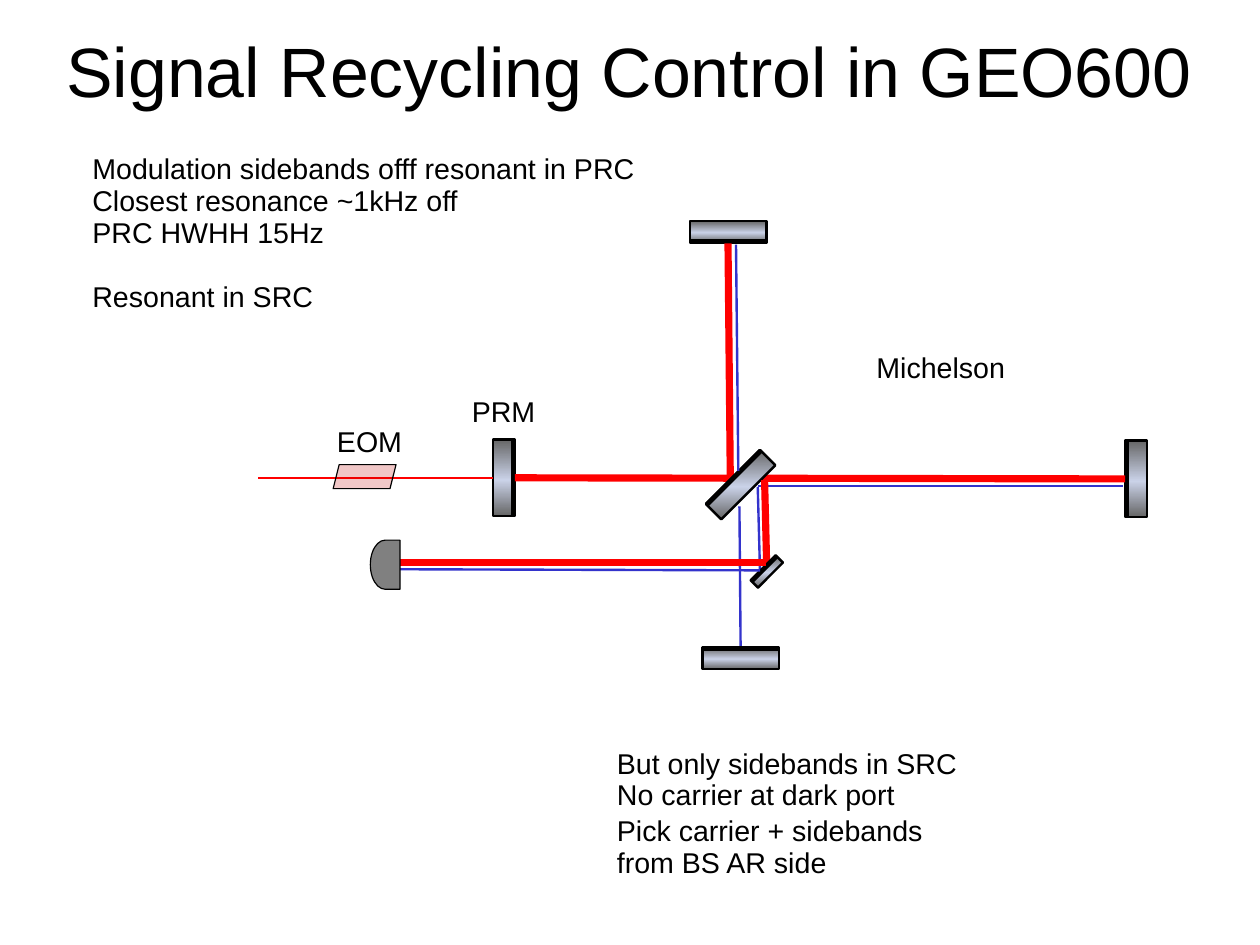
from copy import deepcopy
from math import cos, radians, sin

from lxml import etree
from pptx import Presentation
from pptx.dml.color import RGBColor
from pptx.enum.shapes import MSO_CONNECTOR, MSO_SHAPE
from pptx.enum.text import MSO_ANCHOR, MSO_AUTO_SIZE, PP_ALIGN
from pptx.oxml.ns import qn
from pptx.util import Inches, Pt

STRAIGHT = MSO_CONNECTOR.STRAIGHT
RECTANGLE = MSO_SHAPE.RECTANGLE
PARALLELOGRAM = MSO_SHAPE.PARALLELOGRAM
DELAY = MSO_SHAPE.FLOWCHART_DELAY
MIDDLE = MSO_ANCHOR.MIDDLE
NO_AUTOFIT = MSO_AUTO_SIZE.NONE
GROW = MSO_AUTO_SIZE.SHAPE_TO_FIT_TEXT
CENTER, LEFT = PP_ALIGN.CENTER, PP_ALIGN.LEFT

BLACK = RGBColor(0x00, 0x00, 0x00)
CARRIER_RED = RGBColor(0xFF, 0x00, 0x00)
SIDEBAND_BLUE = RGBColor(0x33, 0x33, 0xCC)
MIRROR_DARK = RGBColor(0x66, 0x66, 0x66)
MIRROR_LIGHT = RGBColor(0xCA, 0xD2, 0xE8)
EOM_RED = RGBColor(0xC0, 0x00, 0x00)
DETECTOR_GRAY = RGBColor(0x80, 0x80, 0x80)

CARRIER = (CARRIER_RED, 4.5)
SIDEBAND = (SIDEBAND_BLUE, 1.5)
INPUT = (CARRIER_RED, 1)
COATING = (BLACK, 3)
LEFT_SIDE, RIGHT_SIDE = 1, 3


def format_paragraph(paragraph, size, align):
    paragraph.alignment = align
    paragraph.line_spacing = 0.93
    font_format = {"size": Pt(size), "name": "Arial", "bold": False}
    for key, value in font_format.items():
        setattr(paragraph.font, key, value)
    paragraph.font.color.rgb = BLACK


def fill_title(title, left, top, width, height):
    title.left, title.top = Inches(left), Inches(top)
    title.width, title.height = Inches(width), Inches(height)
    frame = title.text_frame
    frame.text = "Signal Recycling Control in GEO600"
    frame_format = {"margin_left": 0, "margin_right": 0, "margin_top": 0,
                    "margin_bottom": 0, "vertical_anchor": MIDDLE,
                    "auto_size": NO_AUTOFIT, "word_wrap": True}
    for key, value in frame_format.items():
        setattr(frame, key, value)
    format_paragraph(frame.paragraphs[0], 44, CENTER)


def add_caption(shapes, text, left, top, width, height):
    caption = shapes.add_textbox(Inches(left), Inches(top), Inches(width), Inches(height))
    frame = caption.text_frame
    frame.text = text
    frame.word_wrap = False
    frame.auto_size = GROW
    for paragraph in frame.paragraphs:
        format_paragraph(paragraph, 18, LEFT)
    return caption


def add_modulation_notes(shapes, left, top, width, height):
    notes = add_caption(shapes,
                        "Modulation sidebands offf resonant in PRC\n"
                        "Closest resonance ~1kHz off\n"
                        "PRC HWHH 15Hz\n"
                        "Resonant in SRC", left, top, width, height)
    notes.text_frame.paragraphs[-1].space_before = Pt(20)


def add_dark_port_notes(shapes, left, top):
    add_caption(shapes, "But only sidebands in SRC\nNo carrier at dark port",
                left, top, 3.2, 0.66)
    add_caption(shapes, "Pick carrier + sidebands\vfrom BS AR side",
                left, top + 0.59, 2.97, 0.66)


def add_line(shapes, start, end, style):
    color, width = style
    line = shapes.add_connector(STRAIGHT, *(Inches(value) for value in (*start, *end)))
    line.line.color.rgb = color
    line.line.width = Pt(width)
    etree.SubElement(line._element.spPr, qn("a:effectLst"))
    return line


def add_optic(shapes, preset, center, width, height, line_width):
    x, y = center
    optic = shapes.add_shape(preset, Inches(x - width / 2), Inches(y - height / 2),
                             Inches(width), Inches(height))
    optic.shadow.inherit = False
    optic.line.color.rgb = BLACK
    optic.line.width = Pt(line_width)
    return optic


def shade_glass(glass):
    """Dark-light-dark gradient from top to bottom, whatever the rotation."""
    glass.fill.gradient()
    glass.fill.gradient_angle = 270
    gradient = glass._element.spPr.find(qn("a:gradFill"))
    gradient.set("rotWithShape", "0")
    stop_list = gradient.find(qn("a:gsLst"))
    stop_list.insert(1, deepcopy(stop_list[0]))
    shades = ((0, MIRROR_DARK), (0.53, MIRROR_LIGHT), (1, MIRROR_DARK))
    for stop, (position, color) in zip(glass.fill.gradient_stops, shades):
        stop.position = position
        stop.color.rgb = color


def add_mirror(shapes, center, angle, thickness=0.19, length=0.67):
    """Mirror whose coated face looks left at angle 0 and turns clockwise."""
    glass = add_optic(shapes, RECTANGLE, center, thickness, length, 1.5)
    glass.rotation = angle % 180
    shade_glass(glass)
    x, y = center
    across, along = cos(radians(angle)), sin(radians(angle))
    depth = thickness / 2 - 0.01
    face_x, face_y = x - depth * across, y - depth * along
    half_x, half_y = along * length / 2, across * length / 2
    add_line(shapes, (face_x + half_x, face_y - half_y),
             (face_x - half_x, face_y + half_y), COATING)
    return glass


def add_eom(shapes, center):
    eom = add_optic(shapes, PARALLELOGRAM, center, 0.55, 0.21, 0.75)
    eom.fill.solid()
    eom.fill.fore_color.rgb = EOM_RED
    color = eom._element.spPr.find(qn("a:solidFill")).find(qn("a:srgbClr"))
    etree.SubElement(color, qn("a:alpha")).set("val", "22000")


def add_detector(shapes, center):
    detector = add_optic(shapes, DELAY, center, 0.26, 0.43, 0.75)
    detector.rotation = 180
    detector.fill.solid()
    detector.fill.fore_color.rgb = DETECTOR_GRAY


def draw_interferometer(shapes, left, top):
    def at(x, y):
        return left + x, top + y

    def beam(start, end, style):
        return add_line(shapes, at(*start), at(*end), style)

    east_mirror = add_mirror(shapes, at(7.94, 2.69), 0)
    recycling_mirror = add_mirror(shapes, at(2.41, 2.68), 180)
    east_arm = beam((2.51, 2.68), (7.84, 2.69), CARRIER)
    east_arm.begin_connect(recycling_mirror, RIGHT_SIDE)
    east_arm.end_connect(east_mirror, LEFT_SIDE)

    add_mirror(shapes, at(4.37, 0.53), 270)
    beam((4.39, 2.69), (4.37, 0.63), CARRIER)
    add_mirror(shapes, at(4.48, 2.74), 45)

    input_beam = beam((0.26, 2.68), (2.31, 2.68), INPUT)
    input_beam.end_connect(recycling_mirror, LEFT_SIDE)
    add_eom(shapes, at(1.19, 2.67))
    add_mirror(shapes, at(4.48, 4.26), 90)

    sidebands = (((4.46, 2.62), (4.44, 0.64)),
                 ((4.63, 2.75), (7.83, 2.75)),
                 ((4.48, 4.15), (4.47, 2.93)),
                 ((4.65, 3.51), (4.63, 2.76)))
    for start, end in sidebands:
        beam(start, end, SIDEBAND)

    beam((4.71, 3.52), (4.69, 2.7), CARRIER)
    add_mirror(shapes, at(4.71, 3.5), 45, thickness=0.09, length=0.31)
    beam((1.4, 3.42), (4.7, 3.42), CARRIER)
    beam((1.45, 3.48), (4.65, 3.49), SIDEBAND)
    add_detector(shapes, at(1.37, 3.44))

    labels = (("EOM", 0.85, 2.19, 0.78), ("PRM", 2.03, 1.92, 0.76),
              ("Michelson", 5.57, 1.54, 1.34))
    for text, x, y, width in labels:
        add_caption(shapes, text, *at(x, y), width, 0.38)


def main():
    presentation = Presentation()
    presentation.slide_width = Pt(793.75)
    presentation.slide_height = Pt(595.25)
    slide = presentation.slides.add_slide(presentation.slide_layouts[5])
    fill_title(slide.shapes.title, 0.55, -0.04, 9.92, 1.38)
    draw_interferometer(slide.shapes, 2, 1.5)
    add_modulation_notes(slide.shapes, 0.71, 1.3, 4.99, 1.51)
    add_dark_port_notes(slide.shapes, 5.3, 6.5)
    presentation.save("out.pptx")


if __name__ == "__main__":
    main()
